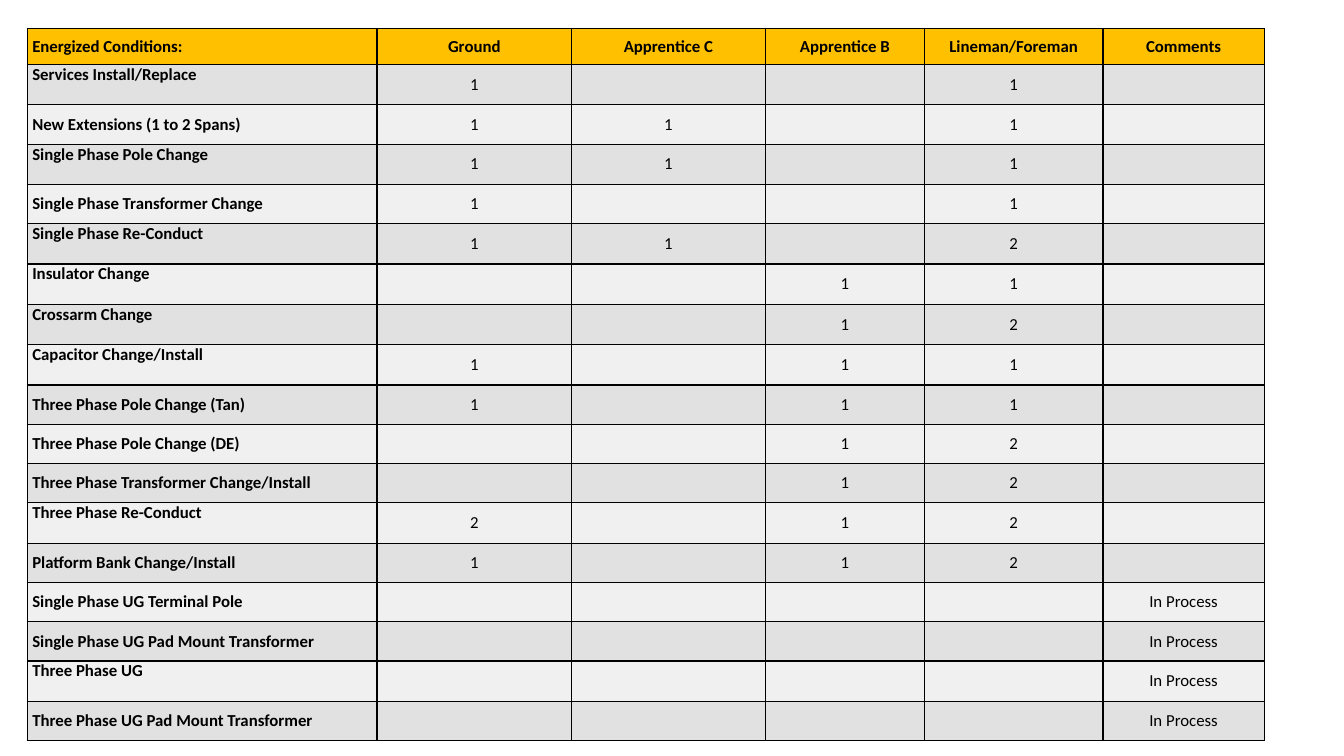
from dataclasses import dataclass

from lxml import etree
from pptx import Presentation
from pptx.dml.color import RGBColor
from pptx.enum import text
from pptx.oxml.ns import qn
from pptx.util import Inches, Pt


@dataclass(frozen=True)
class Theme:
    font: str = "Calibri"
    size: int = 12
    ink: str = "000000"
    header: str = "FFC000"
    bands: tuple = ("E1E1E1", "F0F0F0")
    border: int = 1


def add_borders(cell):
    tc_pr = cell._tc.get_or_add_tcPr()
    for side in ("lnL", "lnR", "lnT", "lnB"):
        ln = etree.SubElement(tc_pr, qn(f"a:{side}"), w=str(Pt(theme.border)))
        fill = etree.SubElement(ln, qn("a:solidFill"))
        etree.SubElement(fill, qn("a:srgbClr"), val=theme.ink)


theme = Theme()
headings = ["Energized Conditions:", "Ground", "Apprentice C", "Apprentice B",
            "Lineman/Foreman", "Comments"]
col_widths = [3.47, 1.93, 1.92, 1.58, 1.77, 1.6]
header_height, middle_height, top_height = 0.36, 0.39, 0.4
top = text.MSO_ANCHOR.TOP
middle = text.MSO_ANCHOR.MIDDLE

# Label, label anchor, then ground, apprentice C, apprentice B, lineman, comments
conditions = [
    ("Services Install/Replace", top, "1", "", "", "1", ""),
    ("New Extensions (1 to 2 Spans)", middle, "1", "1", "", "1", ""),
    ("Single Phase Pole Change", top, "1", "1", "", "1", ""),
    ("Single Phase Transformer Change", middle, "1", "", "", "1", ""),
    ("Single Phase Re-Conduct", top, "1", "1", "", "2", ""),
    ("Insulator Change", top, "", "", "1", "1", ""),
    ("Crossarm Change", top, "", "", "1", "2", ""),
    ("Capacitor Change/Install", top, "1", "", "1", "1", ""),
    ("Three Phase Pole Change (Tan)", middle, "1", "", "1", "1", ""),
    ("Three Phase Pole Change (DE)", middle, "", "", "1", "2", ""),
    ("Three Phase Transformer Change/Install", middle, "", "", "1", "2", ""),
    ("Three Phase Re-Conduct", top, "2", "", "1", "2", ""),
    ("Platform Bank Change/Install", middle, "1", "", "1", "2", ""),
    ("Single Phase UG Terminal Pole", middle, "", "", "", "", "In Process"),
    ("Single Phase UG Pad Mount Transformer", middle, "", "", "", "", "In Process"),
    ("Three Phase UG", top, "", "", "", "", "In Process"),
    ("Three Phase UG Pad Mount Transformer", middle, "", "", "", "", "In Process"),
]

prs = Presentation()
prs.slide_width, prs.slide_height = Inches(13.33), Inches(7.5)
s = prs.slides.add_slide(prs.slide_layouts[6])

rows = [(headings[0], middle, *headings[1:])] + conditions
heights = [header_height] + [top_height if c[1] == top else middle_height
                             for c in conditions]
table = s.shapes.add_table(len(rows), len(headings), Inches(0.27), Inches(0.28),
                           Inches(sum(col_widths)), Inches(sum(heights))).table
table.horz_banding = False

for column, width in zip(table.columns, col_widths):
    column.width = Inches(width)

for i, (label, anchor, *values) in enumerate(rows):
    table.rows[i].height = Inches(heights[i])
    for j, content in enumerate([label, *values]):
        cell = table.cell(i, j)
        cell.margin_left = cell.margin_right = Inches(0.05)
        cell.margin_top = cell.margin_bottom = 0
        cell.vertical_anchor = anchor if j == 0 else middle
        add_borders(cell)
        cell.fill.solid()
        color = theme.header if i == 0 else theme.bands[(i - 1) % 2]
        cell.fill.fore_color.rgb = RGBColor.from_string(color)
        if not content:
            continue
        cell.text_frame.text = content
        p = cell.text_frame.paragraphs[0]
        p.alignment = text.PP_ALIGN.LEFT if j == 0 else text.PP_ALIGN.CENTER
        r = p.runs[0]
        r.font.name = theme.font
        r.font.size = Pt(theme.size)
        r.font.bold = i == 0 or j == 0
        r.font.color.rgb = RGBColor.from_string(theme.ink)

prs.save("out.pptx")
